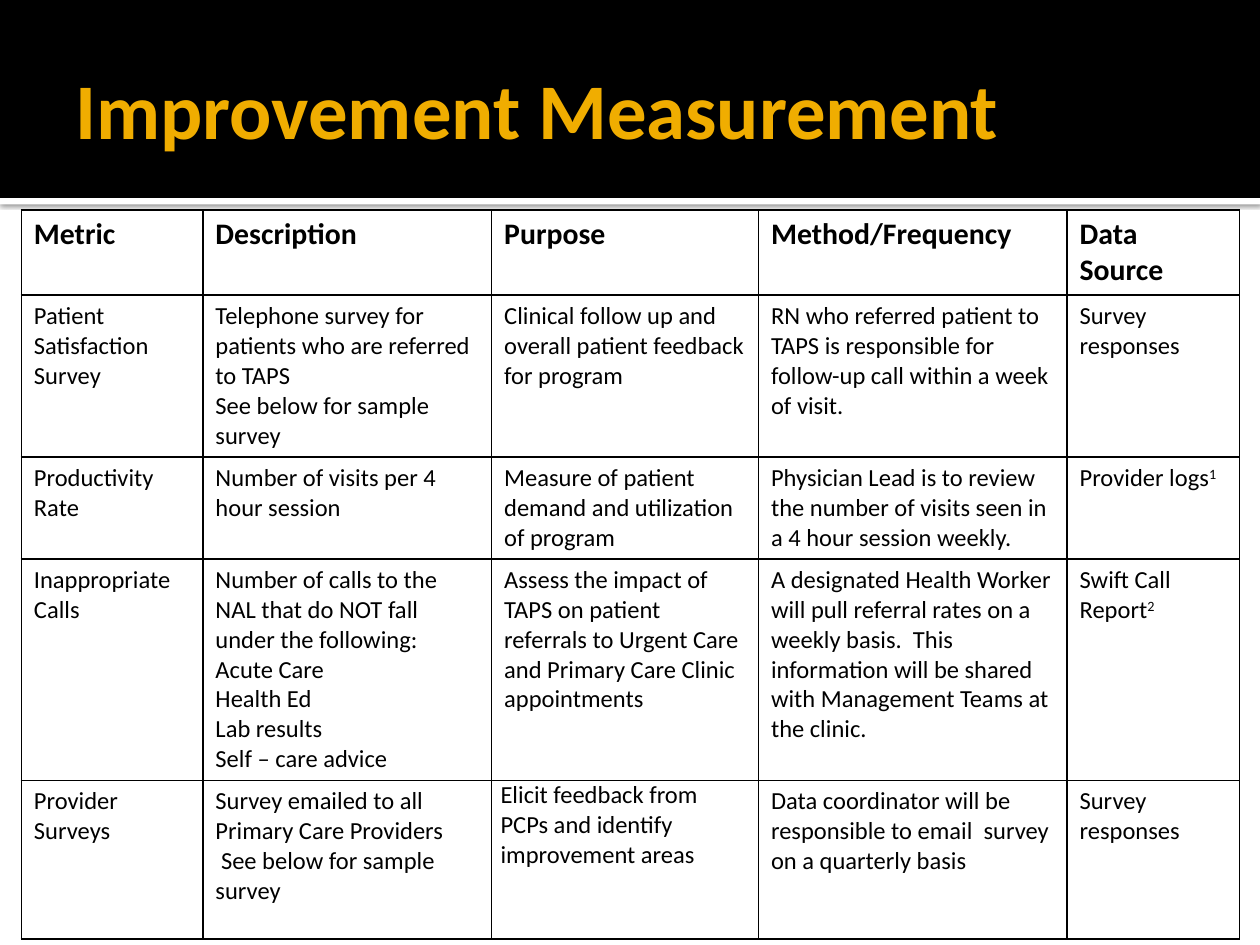
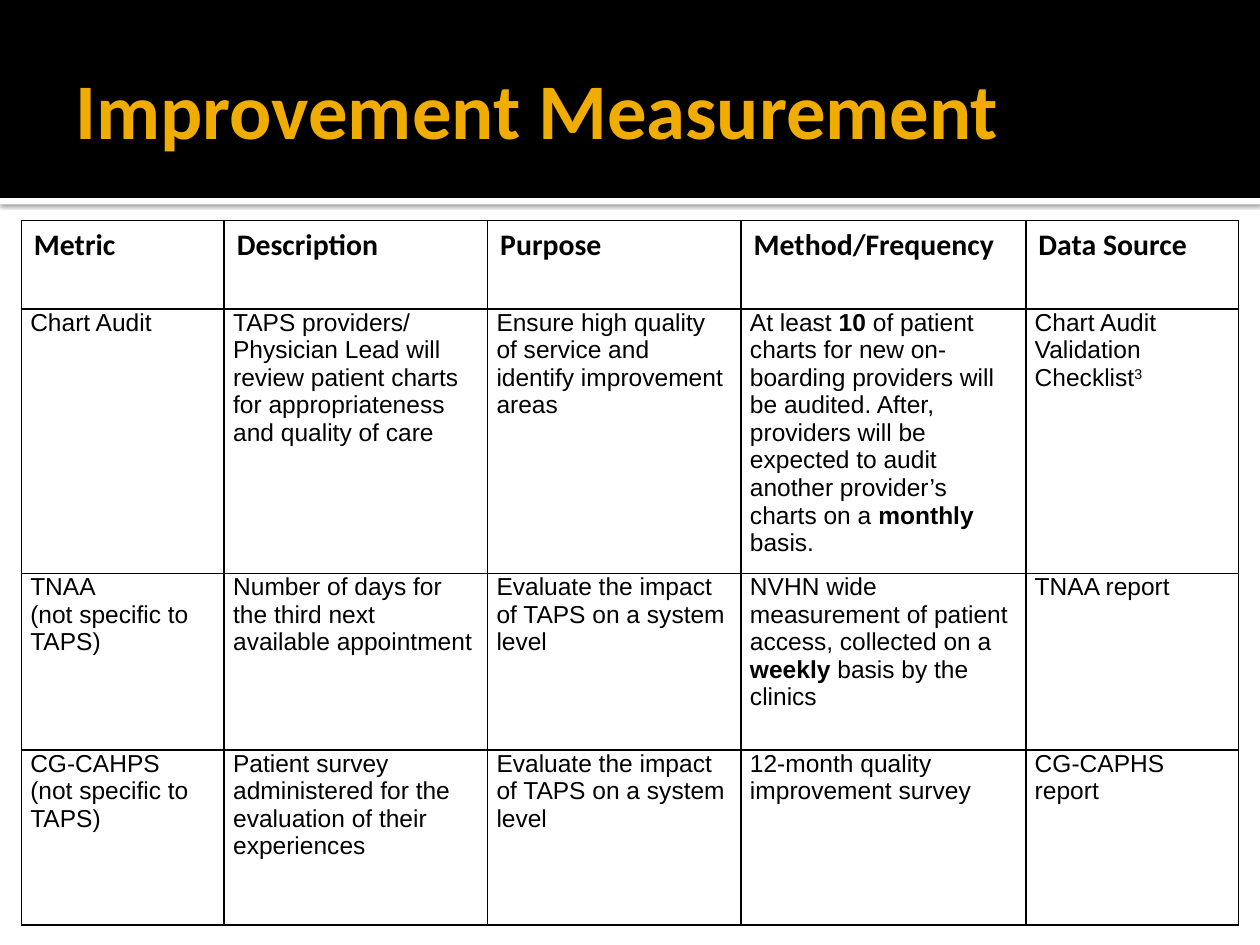
from lxml.etree import SubElement
from pptx import Presentation
from pptx.dml.color import RGBColor
from pptx.enum.shapes import MSO_SHAPE
from pptx.enum.text import MSO_ANCHOR, PP_ALIGN
from pptx.oxml import parse_xml
from pptx.oxml.ns import nsdecls, qn
from pptx.util import Cm, Pt

HUES = {"black": "000000", "white": "FFFFFF", "gold": "F0AD00"}
WIDE, HIGH = 25.4, 19.05
HEADS = ["Metric", "Description", "Purpose", "Method/Frequency", "Data Source"]
LEVEL = "Evaluate the impact of TAPS on a system level"

# In cell text, *...* is bold, ^...^ is superscript and a line break starts a paragraph.
CARE = [
    ["Patient Satisfaction Survey",
     "Telephone survey for patients who are referred to TAPS\nSee below for sample survey",
     "Clinical follow up and overall patient feedback for program",
     "RN who referred patient to TAPS is responsible for follow-up call within a week of visit.",
     "Survey responses"],
    ["Productivity Rate",
     "Number of visits per 4 hour session",
     "Measure of patient demand and utilization of program",
     "Physician Lead is to review the number of visits seen in a 4 hour session weekly.",
     "Provider logs^1^"],
    ["Inappropriate Calls",
     "Number of calls to the NAL that do NOT fall under the following:\n"
     "Acute Care\nHealth Ed\nLab results\nSelf – care advice",
     "Assess the impact of TAPS on patient referrals to Urgent Care "
     "and Primary Care Clinic appointments",
     "A designated Health Worker will pull referral rates on a weekly basis.  "
     "This information will be shared with Management Teams at the clinic.",
     "Swift Call Report^2^"],
    ["Provider Surveys",
     "Survey emailed to all Primary Care Providers\n See below for sample survey",
     "Elicit feedback from PCPs and identify improvement areas",
     "Data coordinator will be responsible to email  survey on a quarterly basis",
     "Survey\nresponses"],
]
AUDIT = [
    ["Chart Audit",
     "TAPS providers/ Physician Lead will review patient charts "
     "for appropriateness and quality of care",
     "Ensure high quality of service and identify improvement areas",
     "At least *10* of patient charts for new on-boarding providers will be audited. "
     "After, providers will be expected to audit another provider’s charts "
     "on a *monthly *basis.",
     "Chart Audit Validation Checklist^3^"],
    ["TNAA\n(not specific to TAPS)",
     "Number of days for the third next available appointment",
     LEVEL,
     "NVHN wide measurement of patient access, collected on a *weekly* basis by the clinics",
     "TNAA report"],
    ["CG-CAHPS\n(not specific to TAPS)",
     "Patient survey administered for the evaluation of their experiences",
     LEVEL,
     "12-month quality improvement survey",
     "CG-CAPHS report"],
]


class Deck:
    def __init__(self):
        self.show = Presentation()
        self.show.slide_width, self.show.slide_height = Cm(WIDE), Cm(HIGH)
        self.slide = None

    def page(self, title):
        self.slide = self.show.slides.add_slide(self.show.slide_layouts[5])
        self.band(0, 3.99, "black")
        self.shade(self.band(3.99, 0.13, "white"))
        self.title(title)

    def band(self, top, high, hue):
        """Lay a full-width bar behind everything else."""
        bar = self.slide.shapes.add_shape(
            MSO_SHAPE.RECTANGLE, 0, Cm(top), Cm(WIDE), Cm(high))
        bar.shadow.inherit = False
        bar.fill.solid()
        bar.fill.fore_color.rgb = RGBColor.from_string(HUES[hue])
        bar.line.fill.background()
        self.slide.shapes.element.insert(2, bar.element)
        return bar

    def shade(self, bar):
        """Give the bar a soft shadow below."""
        glow = bar.element.spPr.find(qn("a:effectLst"))
        drop = SubElement(glow, qn("a:outerShdw"), blurRad=str(Pt(2.5)),
                          dist=str(Pt(0.8)), dir="5400000", rotWithShape="0")
        hue = SubElement(drop, qn("a:srgbClr"), val=HUES["black"])
        SubElement(hue, qn("a:alpha"), val="60000")

    def title(self, text):
        box = self.slide.shapes.title
        box.left, box.top, box.width, box.height = Cm(1.27), Cm(0.43), Cm(22.86), Cm(3.48)
        frame = box.text_frame
        frame.vertical_anchor = MSO_ANCHOR.MIDDLE
        frame.margin_left = Cm(0.25)
        frame.margin_top = frame.margin_right = frame.margin_bottom = Cm(0.13)
        para = frame.paragraphs[0]
        para.alignment = PP_ALIGN.LEFT
        self.run(para, text, 45, hue="gold", bold=True)

    def run(self, para, text, size, face="Calibri", hue="black", bold=False, sup=False):
        run = para.add_run()
        run.text = text
        font = run.font
        font.size, font.name, font.bold = Pt(size), face, bold
        font.color.rgb = RGBColor.from_string(HUES[hue])
        if sup:
            run._r.get_or_add_rPr().set("baseline", "30000")

    def table(self, top, cols, rows, body, face, tight):
        """Draw the metrics; tight holds the (row, column) places with slim margins."""
        grid = self.slide.shapes.add_table(
            len(rows), len(cols), Cm(0.43), Cm(top), Cm(sum(cols)), Cm(sum(rows))).table
        grid.first_row = grid.horz_banding = False
        for col, wide in zip(grid.columns, cols):
            col.width = Cm(wide)
        for row, high in zip(grid.rows, rows):
            row.height = Cm(high)
        for r, line in enumerate([HEADS] + body):
            for c, text in enumerate(line):
                cell = grid.cell(r, c)
                if (r, c) in tight:
                    cell.margin_left = cell.margin_right = Cm(0.18)
                    cell.margin_top = cell.margin_bottom = 0
                self.frame(cell)
                if r:
                    self.fill(cell, text, 14, face)
                else:
                    self.fill(cell, f"*{text}*", 17, "Calibri")

    def frame(self, cell):
        """Clear the fill and rule all four sides."""
        cell.fill.background()
        props = cell._tc.get_or_add_tcPr()
        for spot, side in enumerate("LRTB"):
            props.insert(spot, parse_xml(
                f'<a:ln{side} {nsdecls("a")} w="{Pt(1)}"><a:solidFill>'
                f'<a:srgbClr val="{HUES["black"]}"/></a:solidFill></a:ln{side}>'))

    def fill(self, cell, text, size, face):
        frame = cell.text_frame
        for n, line in enumerate(text.split("\n")):
            para = frame.add_paragraph() if n else frame.paragraphs[0]
            for b, part in enumerate(line.split("*")):
                for s, bit in enumerate(part.split("^")):
                    if bit:
                        self.run(para, bit, size, face, bold=b % 2 == 1, sup=s % 2 == 1)


def main():
    deck = Deck()
    deck.page("Improvement Measurement")
    deck.table(4.23, [3.66, 5.82, 5.38, 6.22, 3.48], [1.68, 3.18, 2.01, 4.34, 3.2],
               CARE, "Calibri", {(4, 2)})
    deck.page("Improvement Measurement")
    deck.table(4.45, [4.09, 5.31, 5.11, 5.74, 4.29], [1.78, 5.33, 3.56, 3.53],
               AUDIT, "Arial", {(r, c) for r in (1, 2, 3) for c in range(5)})
    deck.show.save("out.pptx")


if __name__ == "__main__":
    main()
